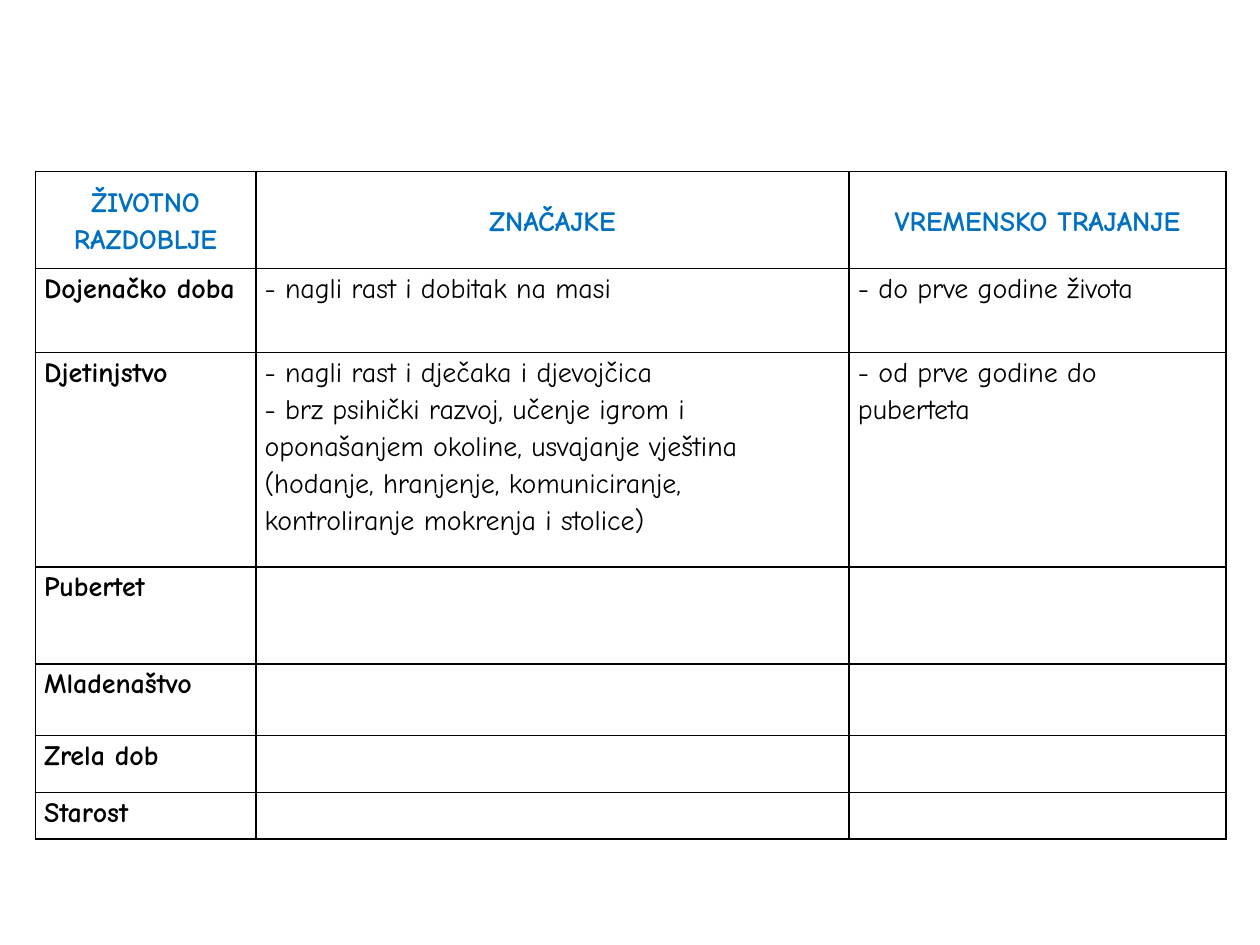
from dataclasses import dataclass

from lxml import etree
from pptx import Presentation
from pptx.dml.color import RGBColor
from pptx.enum.text import MSO_ANCHOR, PP_ALIGN
from pptx.oxml.ns import qn
from pptx.table import _Cell
from pptx.util import Inches, Pt

CENTER, LEFT = PP_ALIGN.CENTER, PP_ALIGN.LEFT
MIDDLE, TOP = MSO_ANCHOR.MIDDLE, MSO_ANCHOR.TOP


@dataclass(frozen=True)
class Theme:
    font: str = "Comic Neue"
    size: float = 16
    line_spacing: float = 1.15
    heading: str = "0070C0"
    text: str = "000000"
    background: str = "FFFFFF"
    border: str = "000000"
    border_width: float = 1
    side_margin: float = 0.07


@dataclass(frozen=True)
class LifeStage:
    name: str
    height: float
    features: str = ""
    duration: str = ""


THEME = Theme()
SLIDE_W, SLIDE_H = 10, 7.5
TABLE_LEFT, TABLE_TOP = 0.28, 1.36
COLUMN_WIDTHS = (1.75, 4.71, 2.99)

HEADER = LifeStage("ŽIVOTNO RAZDOBLJE", 0.77, "ZNAČAJKE", "VREMENSKO TRAJANJE")
STAGES = (
    LifeStage("Dojenačko doba", 0.67, "- nagli rast i dobitak na masi",
              "- do prve godine života"),
    LifeStage("Djetinjstvo", 1.7,
              "- nagli rast i dječaka i djevojčica\n"
              "- brz psihički razvoj, učenje igrom i oponašanjem okoline, "
              "usvajanje vještina (hodanje, hranjenje, komuniciranje, "
              "kontroliranje mokrenja i stolice)",
              "- od prve godine do puberteta"),
    LifeStage("Pubertet", 0.77),
    LifeStage("Mladenaštvo", 0.57),
    LifeStage("Zrela dob", 0.45),
    LifeStage("Starost", 0.37),
)


def add_borders(cell: _Cell) -> None:
    """Outline all four sides; lines must precede the fill in the cell XML."""
    tc_pr = cell._tc.get_or_add_tcPr()
    for i, side in enumerate(("lnL", "lnR", "lnT", "lnB")):
        ln = etree.Element(qn(f"a:{side}"), w=str(Pt(THEME.border_width)))
        fill = etree.SubElement(ln, qn("a:solidFill"))
        etree.SubElement(fill, qn("a:srgbClr"), val=THEME.border)
        tc_pr.insert(i, ln)


def fill_cell(cell: _Cell, text: str, is_header: bool, bold: bool) -> None:
    cell.fill.solid()
    cell.fill.fore_color.rgb = RGBColor.from_string(THEME.background)
    add_borders(cell)
    cell.margin_left = cell.margin_right = Inches(THEME.side_margin)
    cell.margin_top = cell.margin_bottom = 0
    cell.vertical_anchor = MIDDLE if is_header else TOP
    if not text:
        return
    cell.text_frame.text = text
    color = THEME.heading if is_header else THEME.text
    for p in cell.text_frame.paragraphs:
        p.alignment = CENTER if is_header else LEFT
        p.line_spacing = THEME.line_spacing
        for r in p.runs:
            r.font.name = THEME.font
            r.font.size = Pt(THEME.size)
            r.font.bold = bold
            r.font.color.rgb = RGBColor.from_string(color)


def main() -> None:
    prs = Presentation()
    prs.slide_width, prs.slide_height = Inches(SLIDE_W), Inches(SLIDE_H)
    slide = prs.slides.add_slide(prs.slide_layouts[6])

    rows = (HEADER, *STAGES)
    table = slide.shapes.add_table(
        len(rows), len(COLUMN_WIDTHS), Inches(TABLE_LEFT), Inches(TABLE_TOP),
        Inches(sum(COLUMN_WIDTHS)), Inches(sum(row.height for row in rows)),
    ).table
    for column, width in zip(table.columns, COLUMN_WIDTHS):
        column.width = Inches(width)
    for i, stage in enumerate(rows):
        table.rows[i].height = Inches(stage.height)
        is_header = stage is HEADER
        for j, text in enumerate((stage.name, stage.features, stage.duration)):
            fill_cell(table.cell(i, j), text, is_header, is_header or j == 0)

    prs.save("out.pptx")


if __name__ == "__main__":
    main()
